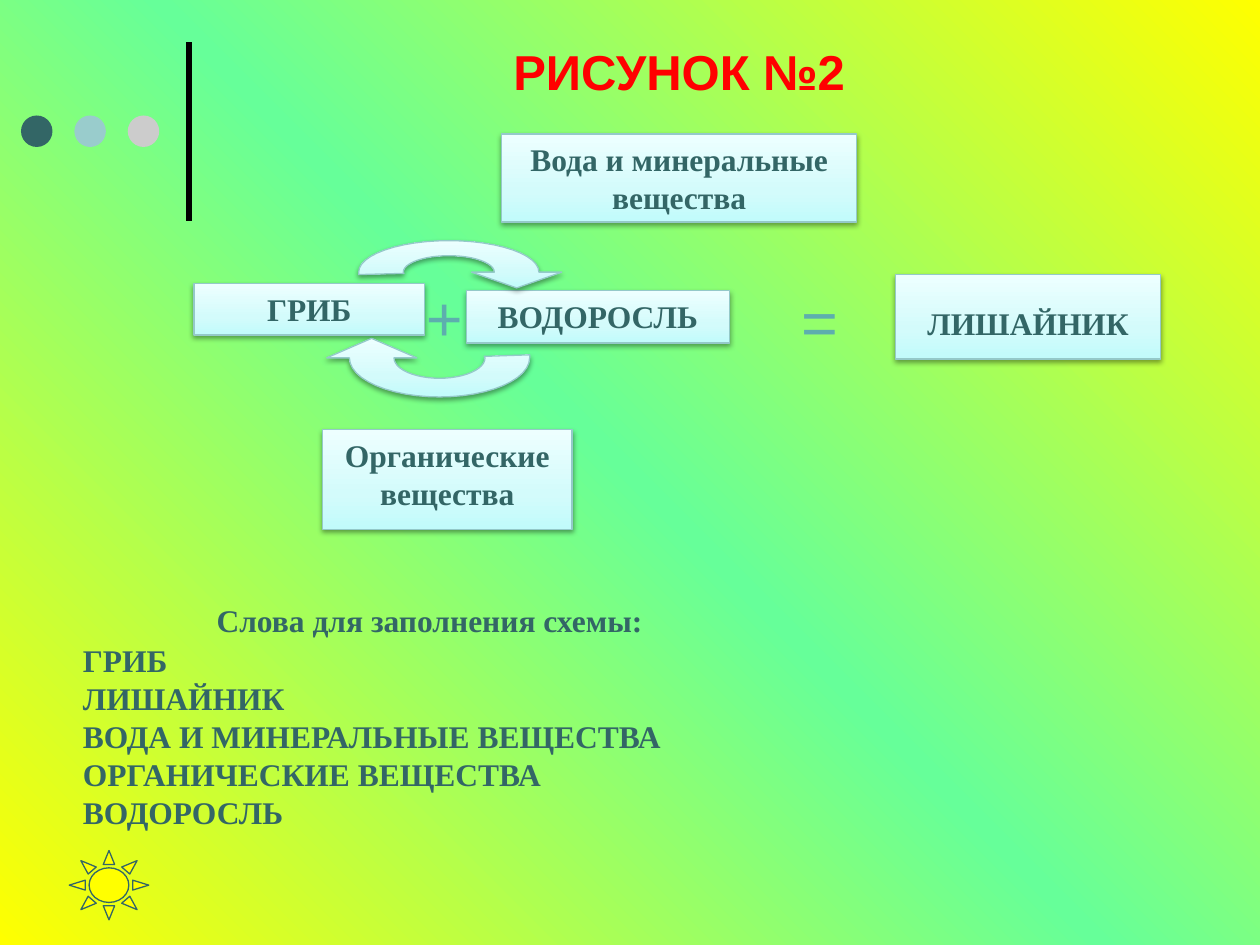
from math import cos, pi, sin
from lxml.etree import SubElement
from pptx import Presentation
from pptx.dml.color import RGBColor
from pptx.enum.shapes import MSO_CONNECTOR, MSO_SHAPE
from pptx.enum.text import MSO_ANCHOR, MSO_AUTO_SIZE, PP_ALIGN
from pptx.oxml.ns import qn
from pptx.util import Pt

# Content: (text, left, top, width, height, top inset), in points
TITLE = "РИСУНОК №2"
BOXES = [
    ("ЛИШАЙНИК", 511.9, 157, 151.2, 48.2, 16.6),
    ("Вода и минеральные вещества", 286.6, 76.6, 203, 50.4, 3.6),
    ("ГРИБ", 110.9, 162, 131.8, 29.5, 3.6),
    ("ВОДОРОСЛЬ", 266.4, 165.9, 150.5, 30.2, 3.6),
    ("Органические вещества", 184.3, 245.5, 142.6, 56.9, 3.6),
]
SIGNS = [("=", 450.7, 157.7), ("+", 236.2, 155.5)]
WORDS_HEADING = "Слова для заполнения схемы:"
WORDS = ["ГРИБ", "ЛИШАЙНИК", "ВОДА И МИНЕРАЛЬНЫЕ ВЕЩЕСТВА",
         "ОРГАНИЧЕСКИЕ ВЕЩЕСТВА", "ВОДОРОСЛЬ"]
# Curved arrows: centre x, centre y, x scale, y scale
ARROWS = [(256.5, 155.5, 1, 1), (251.2, 204.5, -1, -1.24)]


class Theme:
    title, text, sign, line = "FF0000", "336666", "5DAEAE", "94C9C9"
    bar, sun = "000000", "FFFF00"
    dots = ["336666", "99CCCC", "CCCCCC"]
    background = [(0, "FFFF00"), (50, "66FF99"), (100, "FFFF00")]
    panel = [(0, "C1FBFB"), (35, "D3FBFB"), (100, "EDFFFF")]
    sans, serif = "Arial", "Times New Roman"
    title_size, sign_size, text_size = 28, 36, 18


def rgb(value):
    return RGBColor.from_string(value)


def set_gradient(fill, element, stops, angle):
    fill.gradient()
    fill.gradient_angle = angle
    gs_list = element.find(".//" + qn("a:gsLst"))
    for gs in list(gs_list):
        gs_list.remove(gs)
    for pos, color in stops:
        gs = SubElement(gs_list, qn("a:gs"), pos=str(pos * 1000))
        SubElement(gs, qn("a:srgbClr"), val=color)


def style_panel(sp):
    set_gradient(sp.fill, sp._element, Theme.panel, 90)
    sp.line.color.rgb = rgb(Theme.line)
    sp.line.width = Pt(0.75)
    effects = SubElement(sp._element.spPr, qn("a:effectLst"))
    shadow = SubElement(effects, qn("a:outerShdw"), blurRad=str(Pt(3.1)),
                        dist=str(Pt(1.6)), dir="5400000", rotWithShape="0")
    color = SubElement(shadow, qn("a:srgbClr"), val="000000")
    SubElement(color, qn("a:alpha"), val="38000")


def write(sp, lines, font, size, color, bold=True, align=PP_ALIGN.CENTER,
          anchor=MSO_ANCHOR.TOP, wrap=True):
    tf = sp.text_frame
    tf.auto_size = MSO_AUTO_SIZE.NONE
    tf.word_wrap = wrap
    tf.vertical_anchor = anchor
    for i, line in enumerate(lines):
        p = tf.add_paragraph() if i else tf.paragraphs[0]
        p.text = line
        p.alignment = align
        p.font.name, p.font.size, p.font.bold = font, Pt(size), bold
        p.font.color.rgb = rgb(color)


def add_text(left, top, width, height, lines, *style, **options):
    sp = s.shapes.add_textbox(Pt(left), Pt(top), Pt(width), Pt(height))
    write(sp, lines, *style, **options)


def arrow_points():
    """Outline of a curved band with its head on the right, about (0, 0)."""
    steps = [i * pi / 24 for i in range(25)]
    inner = [(26 * cos(a), -9.4 * sin(a)) for a in steps]
    outer = [(-51.5 * cos(a), -18 * sin(a)) for a in steps]
    tail = [(-25.6, 0.7), (-51.5, 1.4)]
    return inner + tail + outer + [(64.5, 0), (38.8, 9), (13, 0)]


prs = Presentation()
prs.slide_width, prs.slide_height = Pt(720), Pt(540)
s = prs.slides.add_slide(prs.slide_layouts[5])
set_gradient(s.background.fill, s._element, Theme.background, 45)

# Corner decoration
bar = s.shapes.add_connector(MSO_CONNECTOR.STRAIGHT, Pt(108), Pt(126), Pt(108), Pt(24))
bar.line.color.rgb = rgb(Theme.bar)
bar.line.width = Pt(3)
SubElement(bar._element.spPr, qn("a:effectLst"))
for i, color in enumerate(Theme.dots):
    dot = s.shapes.add_shape(MSO_SHAPE.OVAL, Pt(12 + 30.5 * i), Pt(66), Pt(18), Pt(18))
    dot.shadow.inherit = False
    dot.fill.solid()
    dot.fill.fore_color.rgb = rgb(color)
    dot.line.fill.background()

# Title
title = s.shapes.title
title.left, title.top, title.width, title.height = Pt(172.8), Pt(20.2), Pt(430.6), Pt(41)
write(title, [TITLE], Theme.sans, Theme.title_size, Theme.title, anchor=MSO_ANCHOR.BOTTOM)

# Scheme boxes
serif = (Theme.serif, Theme.text_size, Theme.text)
for text, left, top, width, height, inset in BOXES:
    box = s.shapes.add_shape(MSO_SHAPE.RECTANGLE, Pt(left), Pt(top), Pt(width), Pt(height))
    style_panel(box)
    write(box, [text], *serif)
    box.text_frame.margin_top = Pt(inset)

# Curved arrows
for cx, cy, kx, ky in ARROWS:
    points = [(Pt(cx + kx * x), Pt(cy + ky * y)) for x, y in arrow_points()]
    builder = s.shapes.build_freeform(*points[0])
    builder.add_line_segments(points[1:], close=True)
    style_panel(builder.convert_to_shape())

# Signs
for sign, left, top in SIGNS:
    add_text(left, top, 32.4, 51, [sign], Theme.sans, Theme.sign_size, Theme.sign,
             bold=False, align=PP_ALIGN.LEFT)

# Word list
add_text(115.2, 339.8, 260.6, 28.8, [WORDS_HEADING], *serif, wrap=False)
add_text(40.3, 363, 347.8, 138, WORDS, *serif, align=PP_ALIGN.LEFT, wrap=False)

# Sun
sun = s.shapes.add_shape(MSO_SHAPE.SUN, Pt(39.6), Pt(486), Pt(45.4), Pt(39.6))
sun.shadow.inherit = False
sun.fill.solid()
sun.fill.fore_color.rgb = rgb(Theme.sun)
sun.line.color.rgb = rgb(Theme.text)
sun.line.width = Pt(0.75)

prs.save("out.pptx")
